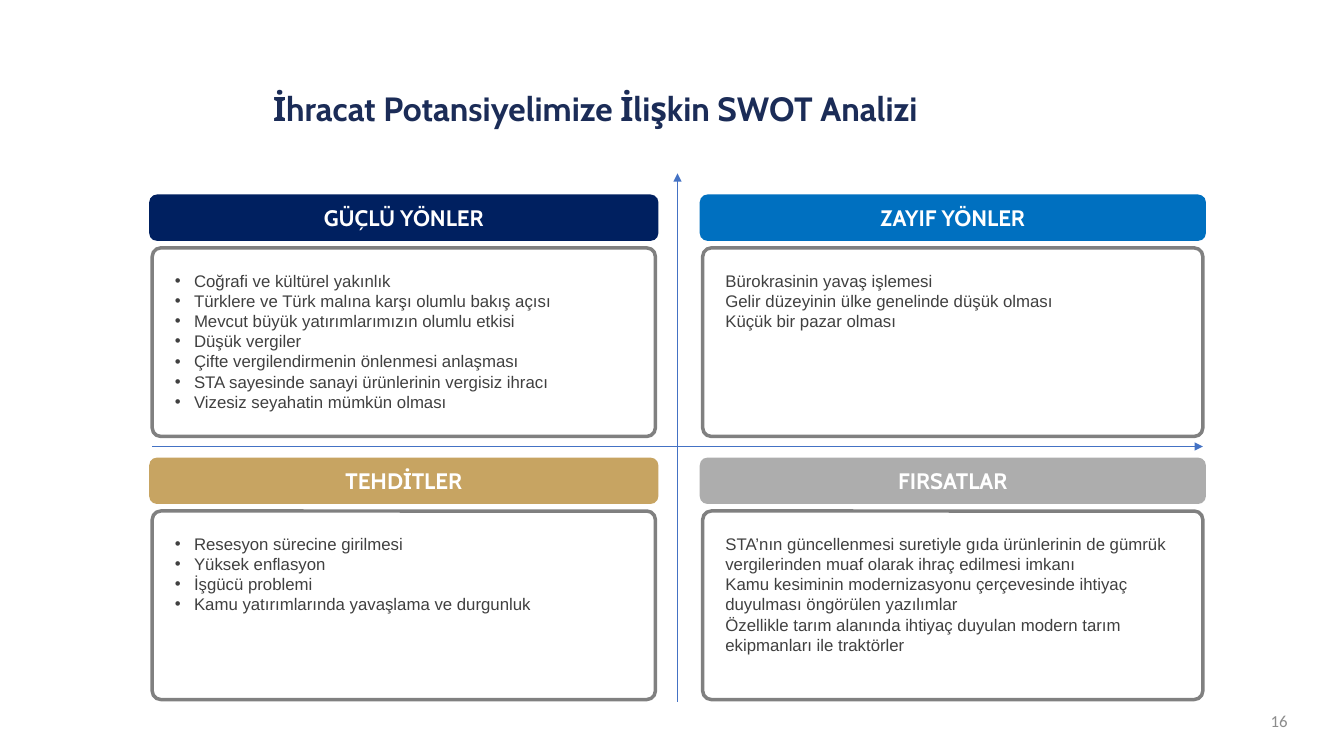
from lxml.etree import SubElement
from pptx import Presentation
from pptx.dml.color import RGBColor as Rgb
from pptx.enum.shapes import MSO_CONNECTOR as Link, MSO_SHAPE as Form
from pptx.enum.text import MSO_ANCHOR as Anchor, MSO_AUTO_SIZE as Fit, PP_ALIGN as Align
from pptx.oxml.ns import qn
from pptx.util import Pt

PX = 9144
INK = {
    "navy": "002060", "blue": "0070C0", "gold": "C7A462", "gray": "ADADAD",
    "title": "1B2C57", "text": "404040", "edge": "808080", "axis": "4472C4",
    "page": "8C8C8C", "white": "FFFFFF",
}
COLS = [(148, 505), (694, 502)]
ROWS = [193, 454]
SWOT = [
    ("GÜÇLÜ YÖNLER", "navy", [
        "Coğrafi ve kültürel yakınlık",
        "Türklere ve Türk malına karşı olumlu bakış açısı",
        "Mevcut büyük yatırımlarımızın olumlu etkisi",
        "Düşük vergiler",
        "Çifte vergilendirmenin önlenmesi anlaşması",
        "STA sayesinde sanayi ürünlerinin vergisiz ihracı",
        "Vizesiz seyahatin mümkün olması",
    ]),
    ("ZAYIF YÖNLER", "blue", [
        "Bürokrasinin yavaş işlemesi",
        "Gelir düzeyinin ülke genelinde düşük olması",
        "Küçük bir pazar olması",
    ]),
    ("TEHDİTLER", "gold", [
        "Resesyon sürecine girilmesi",
        "Yüksek enflasyon",
        "İşgücü problemi",
        "Kamu yatırımlarında yavaşlama ve durgunluk",
    ]),
    ("FIRSATLAR", "gray", [
        "STA’nın güncellenmesi suretiyle gıda ürünlerinin de gümrük "
        "vergilerinden muaf olarak ihraç edilmesi imkanı",
        "Kamu kesiminin modernizasyonu çerçevesinde ihtiyaç duyulması "
        "öngörülen yazılımlar",
        "Özellikle tarım alanında ihtiyaç duyulan modern tarım "
        "ekipmanları ile traktörler",
    ]),
]


def tint(name):
    """Return the named colour."""
    return Rgb.from_string(INK[name])


def scale(*sizes):
    """Turn px lengths into EMU."""
    return [size * PX for size in sizes]


def write(para, text, size, face, color, bold=False):
    """Add one styled run to a paragraph."""
    run = para.add_run()
    run.text = text
    font = run.font
    font.size, font.name, font.bold = Pt(size), face, bold
    font.color.rgb = tint(color)


def bullet(para):
    """Give a paragraph a hanging round bullet."""
    props = para._p.get_or_add_pPr()
    props.set("marL", str(19 * PX))
    props.set("indent", str(-19 * PX))
    SubElement(props, qn("a:buFont"), typeface="Arial")
    SubElement(props, qn("a:buChar"), char="•")


def card(slide, box, fill, pad):
    """Add a flat rounded box and return it."""
    shape = slide.shapes.add_shape(Form.ROUNDED_RECTANGLE, *scale(*box))
    shape.shadow.inherit = False
    shape.fill.solid()
    shape.fill.fore_color.rgb = tint(fill)
    shape.line.fill.background()
    frame = shape.text_frame
    frame.word_wrap = True
    frame.margin_left = frame.margin_right = 20 * PX
    frame.margin_top = frame.margin_bottom = pad * PX
    return shape


def header(slide, box, text, fill):
    """Add a coloured heading bar."""
    frame = card(slide, box, fill, 4).text_frame
    frame.vertical_anchor = Anchor.MIDDLE
    para = frame.paragraphs[0]
    para.alignment = Align.CENTER
    para.space_after = Pt(6)
    write(para, text, 16, "Cabin", "white", True)


def panel(slide, box, items, dots):
    """Add an outlined box that lists the items."""
    shape = card(slide, box, "white", 20)
    shape.adjustments[0] = 0.045
    shape.line.color.rgb = tint("edge")
    shape.line.width = Pt(2.5)
    frame = shape.text_frame
    frame.vertical_anchor = Anchor.TOP
    for num, item in enumerate(items):
        para = frame.add_paragraph() if num else frame.paragraphs[0]
        para.alignment = Align.LEFT
        if dots:
            bullet(para)
        write(para, item, 12, "Arial", "text")


def label(slide, box):
    """Add a text box and return its frame."""
    return slide.shapes.add_textbox(*scale(*box)).text_frame


def arrow(slide, *ends):
    """Add a thin axis with an arrowhead at its end."""
    line = slide.shapes.add_connector(Link.STRAIGHT, *scale(*ends))
    line.line.color.rgb = tint("axis")
    line.line.width = Pt(0.5)
    SubElement(line.line._get_or_add_ln(), qn("a:tailEnd"), type="triangle")
    SubElement(line._element.spPr, qn("a:effectLst"))


def main():
    """Build the SWOT slide and save it."""
    deck = Presentation()
    deck.slide_width, deck.slide_height = scale(1333, 750)
    slide = deck.slides.add_slide(deck.slide_layouts[6])

    page = label(slide, (987, 695, 300, 40))
    page.word_wrap = True
    page.vertical_anchor = Anchor.MIDDLE
    page.paragraphs[0].alignment = Align.RIGHT
    write(page.paragraphs[0], "16", 12, "Calibri", "page")

    for num, (name, fill, items) in enumerate(SWOT):
        row, col = divmod(num, 2)
        left, width = COLS[col]
        top = ROWS[row]
        header(slide, (left, top, width, 46), name, fill)
        panel(slide, (left + 3, top + 53, width - 6, 187), items, col == 0)

    title = label(slide, (261, 82, 672, 50))
    title.word_wrap = False
    title.auto_size = Fit.SHAPE_TO_FIT_TEXT
    write(title.paragraphs[0], "İhracat Potansiyelimize İlişkin SWOT Analizi",
          24, "Cabin", "title", True)

    arrow(slide, 672, 696, 672, 172)
    arrow(slide, 151, 443, 1193, 443)
    deck.save("out.pptx")


if __name__ == "__main__":
    main()
